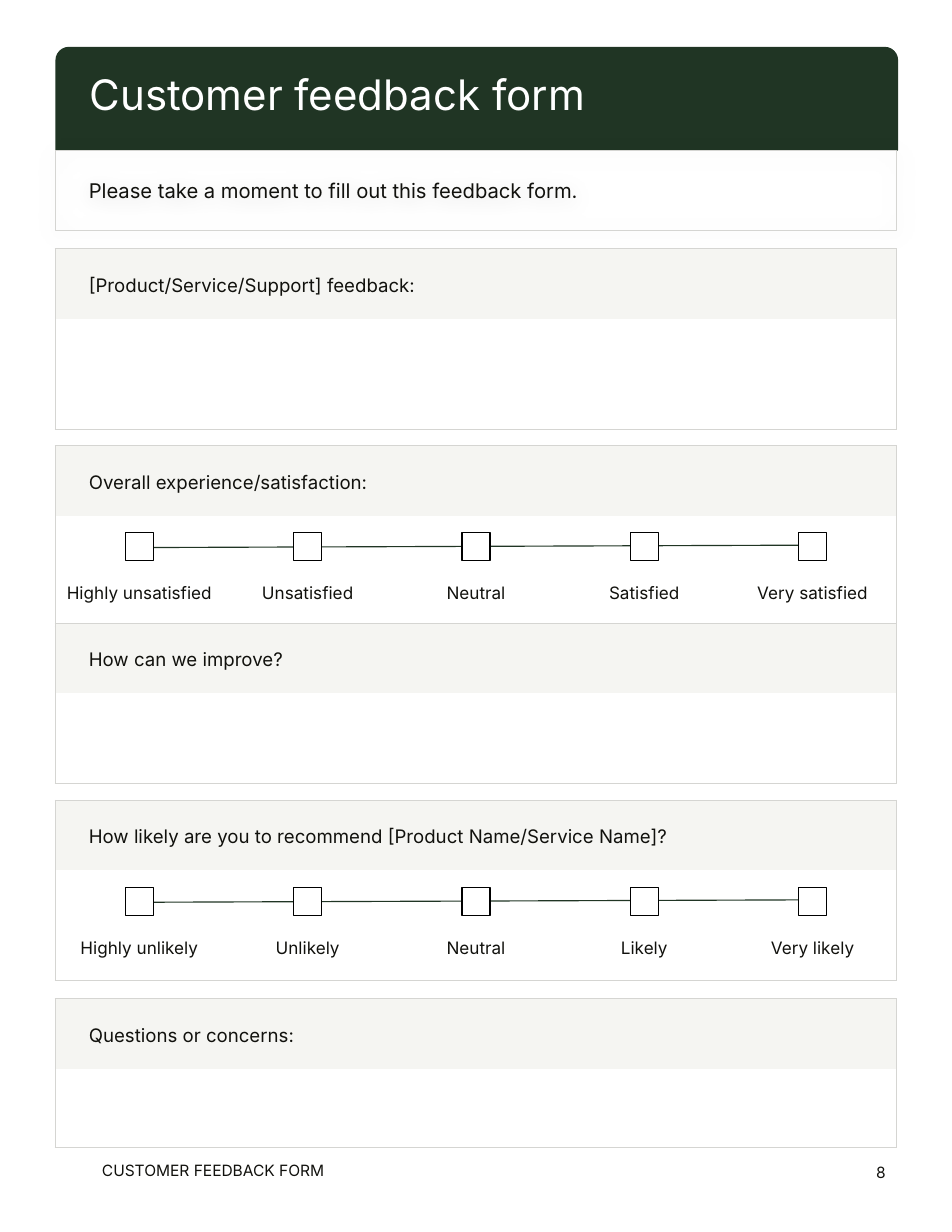
from pptx import Presentation
from pptx.dml.color import RGBColor
from pptx.enum import shapes, text
from pptx.oxml import parse_xml
from pptx.oxml.ns import nsdecls
from pptx.util import Pt

GREEN = RGBColor(0x20, 0x35, 0x24)
INK = RGBColor(0x11, 0x11, 0x0D)
BORDER = RGBColor(0xD5, 0xD5, 0xD2)
BAND = RGBColor(0xF5, 0xF5, 0xF2)
WHITE = RGBColor(0xFF, 0xFF, 0xFF)
BLACK = RGBColor(0, 0, 0)
FONT = "Inter"

LEFT, WIDTH = 35.5, 541
BAND_HEIGHT = 45
CHECKBOX = 18

# Question, top, height of the answer area, labels of the rating scale
SECTIONS = [
    ("[Product/Service/Support] feedback:", 160, 71, []),
    ("Overall experience/satisfaction:", 286.5, 71,
     ["Highly unsatisfied", "Unsatisfied", "Neutral", "Satisfied", "Very satisfied"]),
    ("How can we improve?", 400.5, 58.5, []),
    ("How likely are you to recommend [Product Name/Service Name]?", 514.5, 71,
     ["Highly unlikely", "Unlikely", "Neutral", "Likely", "Very likely"]),
    ("Questions or concerns:", 642, 50.5, []),
]


def write(frame, words, size, color=INK, align=text.PP_ALIGN.LEFT, spacing=None):
    frame.text = words
    paragraph = frame.paragraphs[0]
    paragraph.alignment = align
    paragraph.line_spacing = spacing
    font = paragraph.runs[0].font
    font.name, font.size, font.color.rgb = FONT, Pt(size), color


def set_insets(target, left, top, right, bottom):
    target.margin_left, target.margin_top = Pt(left), Pt(top)
    target.margin_right, target.margin_bottom = Pt(right), Pt(bottom)


def add_box(slide, kind, left, top, width, height, line, fill=None):
    box = slide.shapes.add_shape(kind, Pt(left), Pt(top), Pt(width), Pt(height))
    box.shadow.inherit = False
    if fill is None:
        box.fill.background()
    else:
        box.fill.solid()
        box.fill.fore_color.rgb = fill
    box.line.color.rgb = line
    box.line.width = Pt(0.75)
    return box


def draw_borders(cell, edges):
    """Draw the named edges (of L, R, T, B) and clear the others."""
    properties = cell._tc.get_or_add_tcPr()
    for edge in "LRTB":
        paint = (f'<a:solidFill><a:srgbClr val="{BORDER}"/></a:solidFill>'
                 if edge in edges else "<a:noFill/>")
        properties.append(parse_xml(
            f'<a:ln{edge} {nsdecls("a")} w="{Pt(0.75)}">{paint}</a:ln{edge}>'))


def add_header(slide, left, top, width, height):
    banner = add_box(slide, shapes.MSO_SHAPE.ROUND_2_SAME_RECTANGLE,
                     left, top, width, height, GREEN, GREEN)
    banner.adjustments[0], banner.adjustments[1] = 0.125, 0
    title = slide.shapes.title
    title.left, title.top = Pt(left), Pt(top)
    title.width, title.height = Pt(width), Pt(height)
    frame = title.text_frame
    frame.auto_size = text.MSO_AUTO_SIZE.NONE
    frame.vertical_anchor = text.MSO_ANCHOR.MIDDLE
    set_insets(frame, 21.6, 7.2, 7.2, 7.2)
    write(frame, "Customer feedback form", 27, WHITE, spacing=0.8)
    # The title comes first in the tree; bring it in front of the banner.
    banner._element.addnext(title._element)


def add_intro(slide, left, top, width, height):
    intro = add_box(slide, shapes.MSO_SHAPE.RECTANGLE, left, top, width, height, BORDER)
    intro._element.spPr.find("{*}effectLst").append(parse_xml(
        f'<a:outerShdw {nsdecls("a")} blurRad="{Pt(13.5)}" dist="{Pt(2.1)}" dir="5400000">'
        '<a:srgbClr val="16140C"><a:alpha val="14000"/></a:srgbClr></a:outerShdw>'))
    frame = intro.text_frame
    frame.vertical_anchor = text.MSO_ANCHOR.MIDDLE
    set_insets(frame, 21.6, 0, 0, 0)
    write(frame, "Please take a moment to fill out this feedback form.", 13)


def add_section(slide, left, top, width, answer_height, question, labels):
    """A framed table: question band above an answer area or rating labels."""
    columns = max(len(labels), 1)
    table = slide.shapes.add_table(2, columns, Pt(left), Pt(top), Pt(width),
                                   Pt(BAND_HEIGHT + answer_height)).table
    table.first_row = table.horz_banding = False
    table.rows[0].height, table.rows[1].height = Pt(BAND_HEIGHT), Pt(answer_height)
    for index, column in enumerate(table.columns):
        column.width = Pt(width / columns)
        sides = ("L" if index == 0 else "") + ("R" if index == columns - 1 else "")
        band, answer = table.cell(0, index), table.cell(1, index)
        draw_borders(band, "LTR" if index == 0 else "T" + sides)
        draw_borders(answer, "B" + sides)
        band.fill.solid()
        band.fill.fore_color.rgb = BAND
        answer.fill.background()
        if labels:
            set_insets(answer, 7.2, 43.2, 7.2, 14.4)
            write(answer.text_frame, labels[index], 11, align=text.PP_ALIGN.CENTER)

    header = table.cell(0, 0)
    if columns > 1:
        header.merge(table.cell(0, columns - 1))
    header.vertical_anchor = text.MSO_ANCHOR.MIDDLE
    set_insets(header, 21.6, 14, 14.4, 14)
    write(header.text_frame, question, 12, spacing=1.15)


def add_scale(slide, left, top, width, steps):
    """Checkboxes centred in equal columns and joined by a line."""
    step = width / steps
    first = left + (step - CHECKBOX) / 2
    line = slide.shapes.add_connector(
        shapes.MSO_CONNECTOR.STRAIGHT, Pt(first + CHECKBOX), Pt(top + 9.5),
        Pt(first + step * (steps - 1)), Pt(top + 8))
    line.line.color.rgb = GREEN
    line.line.width = Pt(0.75)
    line._element.spPr.append(parse_xml(f'<a:effectLst {nsdecls("a")}/>'))
    for index in range(steps):
        add_box(slide, shapes.MSO_SHAPE.RECTANGLE, first + index * step, top,
                CHECKBOX, CHECKBOX, BLACK, WHITE)


def add_footer_text(slide, left, top, width, height, words, align, anchor):
    frame = slide.shapes.add_textbox(Pt(left), Pt(top), Pt(width), Pt(height)).text_frame
    frame.word_wrap = True
    frame.vertical_anchor = anchor
    set_insets(frame, 7.2, 7.2, 7.2, 7.2)
    write(frame, words, 10, align=align)


def main():
    form = Presentation()
    form.slide_width, form.slide_height = Pt(612), Pt(792)
    slide = form.slides.add_slide(form.slide_layouts[5])
    add_header(slide, 36, 30.5, 541, 66)
    add_intro(slide, LEFT, 97, WIDTH, 51)
    for question, top, answer_height, labels in SECTIONS:
        add_section(slide, LEFT, top, WIDTH, answer_height, question, labels)
        if labels:
            add_scale(slide, LEFT, top + 56, WIDTH, len(labels))
    add_footer_text(slide, 58.5, 740, 236, 27, "CUSTOMER FEEDBACK FORM",
                    text.PP_ALIGN.LEFT, text.MSO_ANCHOR.TOP)
    add_footer_text(slide, 547, 728, 29.5, 51, "8",
                    text.PP_ALIGN.RIGHT, text.MSO_ANCHOR.MIDDLE)
    form.save("out.pptx")


if __name__ == "__main__":
    main()
